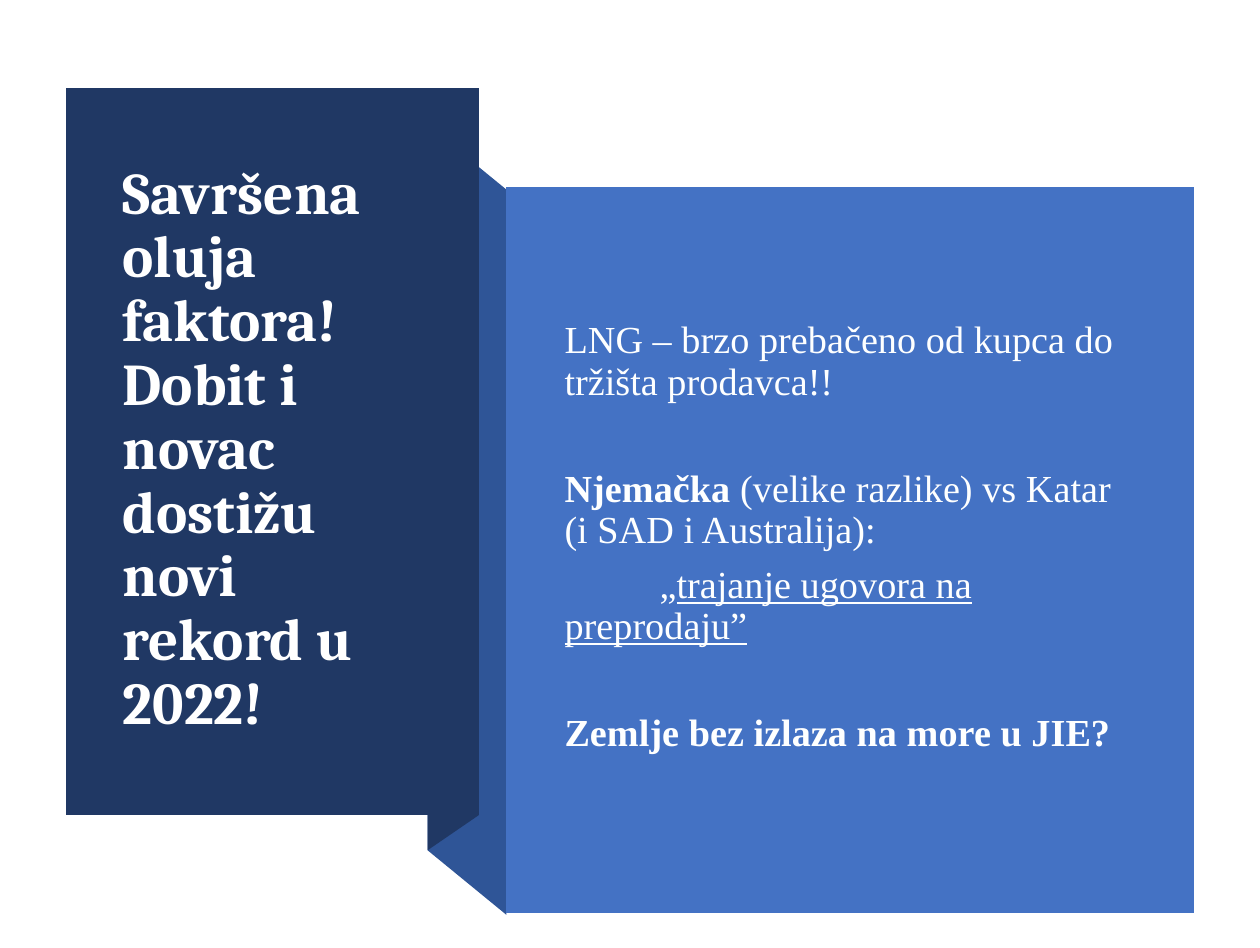
from dataclasses import dataclass

from pptx import Presentation
from pptx import util as u
from pptx.dml.color import RGBColor
from pptx.enum import text

WIDTH, HEIGHT = u.Inches(5.04), u.Inches(3.79)


@dataclass(frozen=True)
class Theme:
    navy: str = "203864"
    fold: str = "2F5597"
    blue: str = "4472C4"
    white: str = "FFFFFF"
    body_white: str = "FEFFFF"
    title_font: str = "Cambria"
    body_font: str = "Times New Roman"
    title_size: float = 17
    body_size: float = 11
    line_spacing: float = 0.9
    para_gap: float = 3.8
    section_gap: float = 19


@dataclass(frozen=True)
class Panel:
    points: list[tuple[float, float]]
    color: str


@dataclass(frozen=True)
class Span:
    text: str
    bold: bool = False
    underline: bool = False


@dataclass(frozen=True)
class Para:
    spans: list[Span]
    gap: float
    indent: float = 0


THEME = Theme()


# Lengths are percentages of the slide's width and height
def px(share: float) -> int:
    return round(WIDTH * share / 100)


def py(share: float) -> int:
    return round(HEIGHT * share / 100)


def box(left: float, top: float, right: float, bottom: float) -> list[tuple[float, float]]:
    return [(left, top), (right, top), (right, bottom), (left, bottom)]


def add_panel(s, panel: Panel) -> None:
    (x, y), *rest = [(px(a), py(b)) for a, b in panel.points]
    builder = s.shapes.build_freeform(x, y)
    builder.add_line_segments(rest)
    sp = builder.convert_to_shape()
    sp.shadow.inherit = False
    sp.fill.solid()
    sp.fill.fore_color.rgb = RGBColor.from_string(panel.color)
    sp.line.fill.background()


def set_frame(tf) -> None:
    tf.word_wrap = True
    tf.auto_size = text.MSO_AUTO_SIZE.NONE
    tf.vertical_anchor = text.MSO_ANCHOR.MIDDLE


def add_run(p, words: str, *, font: str, size: float, color: str,
            bold: bool = False, underline: bool = False) -> None:
    r = p.add_run()
    r.text = words
    r.font.name, r.font.size = font, u.Pt(size)
    r.font.bold, r.font.underline = bold, underline
    r.font.color.rgb = RGBColor.from_string(color)


def format_title(s, words: str) -> None:
    sp = s.shapes.title
    sp.left, sp.top, sp.width, sp.height = px(7.74), py(14.25), px(27.78), py(66.49)
    s.shapes._spTree.append(sp._element)  # bring in front of the panels
    set_frame(sp.text_frame)
    p = sp.text_frame.paragraphs[0]
    p.alignment = text.PP_ALIGN.LEFT
    p.line_spacing = THEME.line_spacing
    add_run(p, words, font=THEME.title_font, size=THEME.title_size,
            color=THEME.white, bold=True)


def add_body(s, paras: list[Para]) -> None:
    tf = s.shapes.add_textbox(px(42.86), py(25.07), px(48.81), py(63.32)).text_frame
    set_frame(tf)
    for i, para in enumerate(paras):
        p = tf.add_paragraph() if i else tf.paragraphs[0]
        p.line_spacing = THEME.line_spacing
        p.space_before = u.Pt(para.gap)
        if para.indent:
            p._p.get_or_add_pPr().set("indent", str(px(para.indent)))
        for span in para.spans:
            add_run(p, span.text, font=THEME.body_font, size=THEME.body_size,
                    color=THEME.body_white, bold=span.bold, underline=span.underline)


# Folded ribbon, from back to front
FOLD_LEFT, FOLD_RIGHT, TITLE_RIGHT, TITLE_BOTTOM = 33.95, 40.2, 38, 86.02
PANELS = [
    Panel([(FOLD_RIGHT, 96.5), (FOLD_LEFT, 89.7), (FOLD_LEFT, 13.2), (FOLD_RIGHT, 20)],
          THEME.fold),
    Panel([(TITLE_RIGHT, TITLE_BOTTOM), (FOLD_LEFT, 89.7), (FOLD_LEFT, 13), (TITLE_RIGHT, 9.3)],
          THEME.navy),
    Panel(box(5.22, 9.3, TITLE_RIGHT, TITLE_BOTTOM), THEME.navy),
    Panel(box(FOLD_RIGHT, 19.72, 94.8, 96.35), THEME.blue),
]

BODY = [
    Para([Span("LNG – brzo prebačeno od kupca do tržišta prodavca!!")], THEME.para_gap),
    Para([Span("Njemačka ", bold=True),
          Span("(velike razlike) vs Katar (i SAD i Australija):")], THEME.section_gap),
    Para([Span("„"), Span("trajanje ugovora na preprodaju”", underline=True)],
         THEME.para_gap, indent=7.54),
    Para([Span("Zemlje bez izlaza na more u JIE?", bold=True)], THEME.section_gap),
]


def main() -> None:
    prs = Presentation()
    prs.slide_width, prs.slide_height = WIDTH, HEIGHT
    s = prs.slides.add_slide(prs.slide_layouts[5])
    for panel in PANELS:
        add_panel(s, panel)
    format_title(s, "Savršena oluja faktora! Dobit i novac dostižu novi rekord u 2022!")
    add_body(s, BODY)
    prs.save("out.pptx")


if __name__ == "__main__":
    main()
